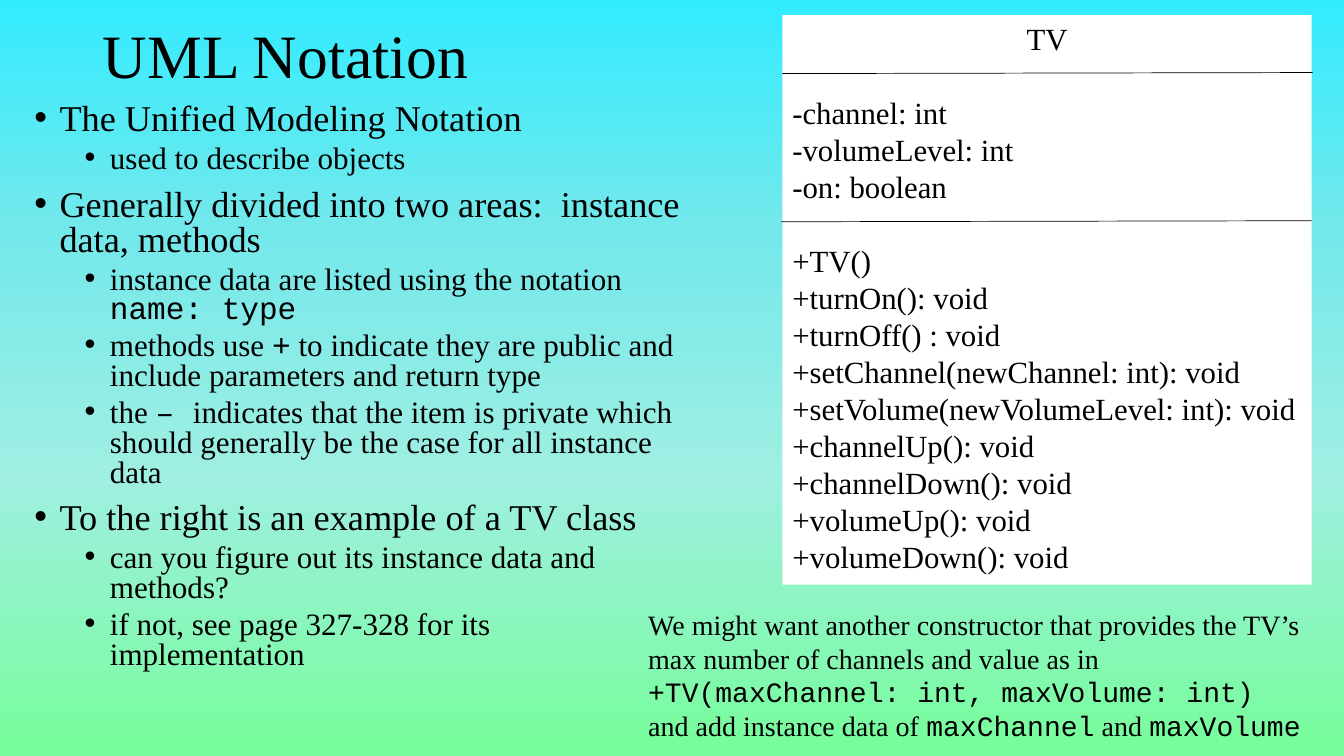
import pptx
import pptx.dml.color
import pptx.enum.shapes
import pptx.enum.text
import pptx.oxml
import pptx.oxml.ns
import pptx.util
from dataclasses import dataclass
from lxml import etree

Inches = pptx.util.Inches
Pt = pptx.util.Pt
RGB = pptx.dml.color.RGBColor.from_string
qn = pptx.oxml.ns.qn
ALIGN = pptx.enum.text.PP_ALIGN
ANCHOR = pptx.enum.text.MSO_ANCHOR
FIT = pptx.enum.text.MSO_AUTO_SIZE


@dataclass(frozen=True)
class Theme:
    ink: str = "000000"
    paper: str = "FFFFFF"
    gradient: tuple = ((0, "33ECFF"), (30, "73E8EB"), (63, "9FEFE2"), (100, "77FD9A"))
    serif: str = "Times New Roman"
    mono: str = "Courier New"
    title: float = 44
    levels: tuple = (25.9, 22.2)
    uml: float = 22
    note: float = 20
    rule: float = 0.5


THEME = Theme()

BULLETS = [
    (0, "The Unified Modeling Notation"),
    (1, "used to describe objects"),
    (0, "Generally divided into two areas:  instance data, methods"),
    (1, "instance data are listed using the notation `name: type`"),
    (1, "methods use `+` to indicate they are public and include parameters and return type"),
    (1, "the `– `indicates that the item is private which should generally be the case for all instance data"),
    (0, "To the right is an example of a TV class"),
    (1, "can you figure out its instance data and methods?"),
    (1, "if not, see page 327-328 for its implementation"),
]
TV_CLASS = [
    ["TV"],
    ["-channel: int", "-volumeLevel: int", "-on: boolean"],
    ["+TV()", "+turnOn(): void", "+turnOff() : void",
     "+setChannel(newChannel: int): void",
     "+setVolume(newVolumeLevel: int): void",
     "+channelUp(): void", "+channelDown(): void",
     "+volumeUp(): void", "+volumeDown(): void"],
]
NOTE = [
    "We might want another constructor that provides the TV’s",
    "max number of channels and value as in",
    "`+TV(maxChannel: int, maxVolume: int)`",
    "and add instance data of `maxChannel` and `maxVolume`",
]


def apply(target, formats):
    for name, value in formats.items():
        setattr(target, name, value)


def place(sp, left, top, width, height):
    apply(sp, dict(left=Inches(left), top=Inches(top),
                   width=Inches(width), height=Inches(height)))


def write(p, text, size, **formats):
    apply(p, formats)
    for i, piece in enumerate(text.split("`")):
        if piece:
            r = p.add_run()
            r.text = piece
            apply(r.font, dict(size=Pt(size), name=THEME.mono if i % 2 else THEME.serif))
            r.font.color.rgb = RGB(THEME.ink)


def paragraphs(tf, count):
    return [tf.paragraphs[0]] + [tf.add_paragraph() for _ in range(count - 1)]


def paint_background(s):
    fill = s.background.fill
    fill.gradient()
    fill.gradient_angle = 270
    stops = s._element.find(".//" + qn("a:gsLst"))
    for stop in list(stops):
        stops.remove(stop)
    for percent, color in THEME.gradient:
        stop = etree.SubElement(stops, qn("a:gs"), pos=str(percent * 1000))
        etree.SubElement(stop, qn("a:srgbClr"), val=color)


def add_title(s, text):
    sp = s.shapes.title
    place(sp, 0.92, -0.14, 11.5, 1.45)
    tf = sp.text_frame
    apply(tf, dict(word_wrap=True, auto_size=FIT.NONE, vertical_anchor=ANCHOR.MIDDLE))
    write(tf.paragraphs[0], text, THEME.title, alignment=ALIGN.LEFT, line_spacing=0.9)


def set_bullet(p, level):
    pPr = p._p.get_or_add_pPr()
    pPr.set("marL", str(Inches(0.25 + 0.5 * level)))
    pPr.set("indent", str(-Inches(0.25)))
    etree.SubElement(pPr, qn("a:buFont"), typeface="Arial")
    etree.SubElement(pPr, qn("a:buChar"), char="•")


def add_bullets(s, items):
    sp = s.placeholders[1]
    place(sp, 0.24, 0.98, 6.63, 6.19)
    tf = sp.text_frame
    apply(tf, dict(word_wrap=True, auto_size=FIT.NONE, vertical_anchor=ANCHOR.TOP))
    for p, (level, text) in zip(paragraphs(tf, len(items)), items):
        write(p, text, THEME.levels[level], level=level, alignment=ALIGN.LEFT,
              line_spacing=0.8, space_before=Pt(5 if level else 10))
        set_bullet(p, level)


def add_rule(shapes, x1, y1, x2, y2):
    line = shapes.add_connector(pptx.enum.shapes.MSO_CONNECTOR.STRAIGHT,
                                Inches(x1), Inches(y1), Inches(x2), Inches(y2))
    line.line.color.rgb = RGB(THEME.ink)
    line.line.width = Pt(THEME.rule)
    etree.SubElement(line._element.spPr, qn("a:effectLst"))


def add_class_box(s, compartments):
    shapes = s.shapes.add_group_shape().shapes
    sp = shapes.add_shape(pptx.enum.shapes.MSO_SHAPE.RECTANGLE, Inches(7.76),
                          Inches(0.15), Inches(5.25), Inches(5.65))
    sp.shadow.inherit = False
    sp.fill.solid()
    sp.fill.fore_color.rgb = RGB(THEME.paper)
    sp.line.fill.background()
    tf = sp.text_frame
    apply(tf, dict(word_wrap=False, auto_size=FIT.SHAPE_TO_FIT_TEXT,
                   vertical_anchor=ANCHOR.TOP))
    rows = [(part, i, text) for part, lines in enumerate(compartments)
            for i, text in enumerate(lines)]
    for p, (part, i, text) in zip(paragraphs(tf, len(rows)), rows):
        gap = THEME.uml * 1.2 if part and i == 0 else 0
        write(p, text, THEME.uml, space_before=Pt(gap),
              alignment=ALIGN.LEFT if part else ALIGN.CENTER)
    add_rule(shapes, 7.76, 0.73, 13.02, 0.72)
    add_rule(shapes, 7.75, 2.2, 13.01, 2.19)


def add_note(s, lines):
    sp = s.shapes.add_textbox(Inches(6.33), Inches(5.98), Inches(7.25), Inches(1.45))
    tf = sp.text_frame
    apply(tf, dict(word_wrap=True, auto_size=FIT.SHAPE_TO_FIT_TEXT))
    for p, text in zip(paragraphs(tf, len(lines)), lines):
        write(p, text, THEME.note)


def main():
    prs = pptx.Presentation()
    apply(prs, dict(slide_width=Inches(13.33), slide_height=Inches(7.5)))
    s = prs.slides.add_slide(prs.slide_layouts[1])
    paint_background(s)
    add_title(s, "UML Notation")
    add_bullets(s, BULLETS)
    add_class_box(s, TV_CLASS)
    add_note(s, NOTE)
    prs.save("out.pptx")


if __name__ == "__main__":
    main()
